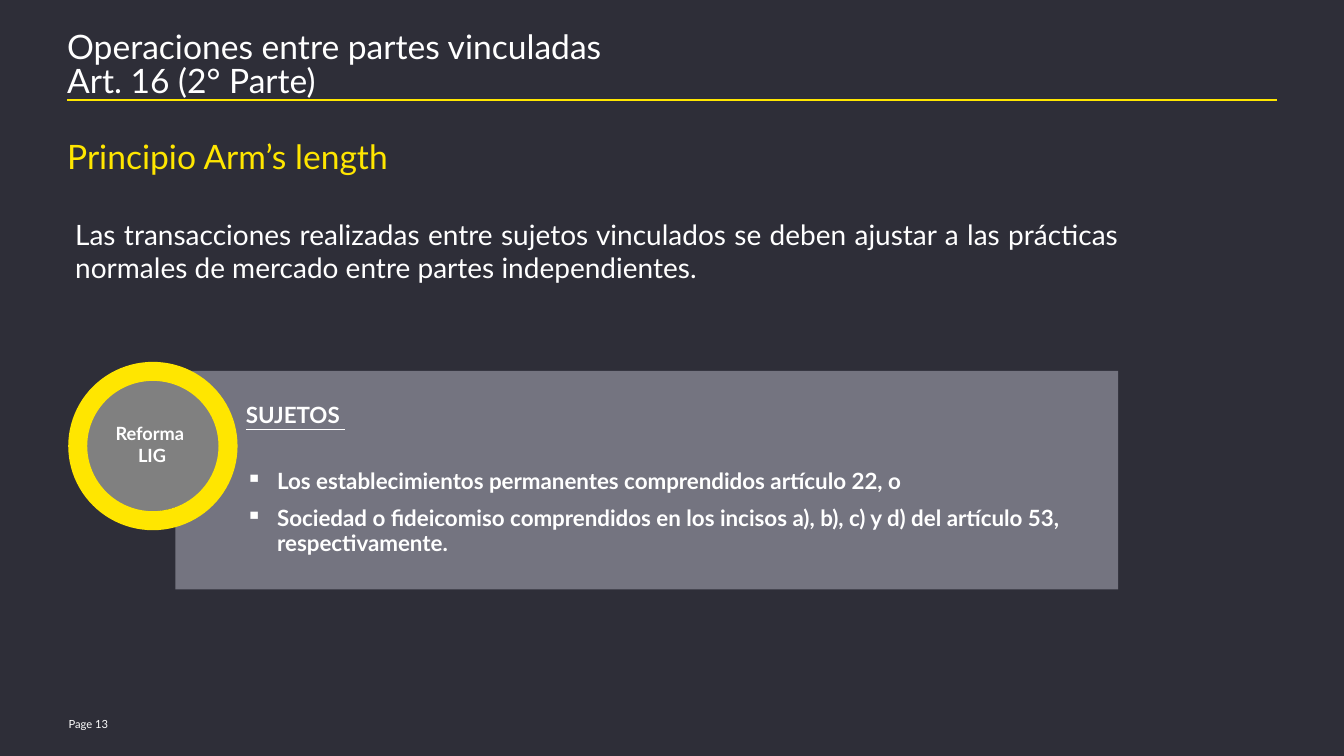
from lxml.etree import SubElement
from pptx import Presentation
from pptx.dml.color import RGBColor
from pptx.enum.shapes import MSO_CONNECTOR as Connector, MSO_SHAPE as Shape
from pptx.enum.text import MSO_ANCHOR as Anchor, PP_ALIGN as Align
from pptx.oxml.ns import qn
from pptx.util import Inches, Pt

BACKGROUND = RGBColor(0x2E, 0x2E, 0x38)
YELLOW = RGBColor(0xFF, 0xE6, 0x00)
WHITE = RGBColor(0xFF, 0xFF, 0xFF)
PANEL = RGBColor(0x74, 0x74, 0x80)
BADGE = RGBColor(0x80, 0x80, 0x80)


class SlideBuilder:
    font_name = "Lato"
    columns, rows = 80, 45

    def __init__(self, presentation):
        self.column = presentation.slide_width / self.columns
        self.row = presentation.slide_height / self.rows
        self.slide = presentation.slides.add_slide(presentation.slide_layouts[6])
        fill = self.slide.background.fill
        fill.solid()
        fill.fore_color.rgb = BACKGROUND

    def place(self, left, top, width, height):
        return (round(left * self.column), round(top * self.row),
                round(width * self.column), round(height * self.row))

    def text(self, *area, anchor=Anchor.TOP):
        box = self.slide.shapes.add_textbox(*self.place(*area))
        return self.frame(box, anchor, (0, 0, 0, 0))

    def shape(self, kind, *area, color):
        shape = self.slide.shapes.add_shape(kind, *self.place(*area))
        shape.shadow.inherit = False
        shape.fill.solid()
        shape.fill.fore_color.rgb = color
        shape.line.fill.background()
        return shape

    def rule(self, left, top, width, color, weight):
        x, y, length, _ = self.place(left, top, width, 0)
        line = self.slide.shapes.add_connector(Connector.STRAIGHT, x, y, x + length, y)
        line.line.color.rgb = color
        line.line.width = Pt(weight)
        SubElement(line._element.spPr, qn("a:effectLst"))

    def frame(self, shape, anchor, insets):
        frame = shape.text_frame
        frame.word_wrap = True
        frame.vertical_anchor = anchor
        (frame.margin_left, frame.margin_top,
         frame.margin_right, frame.margin_bottom) = map(Inches, insets)
        return frame

    def paragraph(self, frame, text, size, color=WHITE, bold=False, underline=False,
                  align=Align.LEFT, spacing=1.0, after=0, margin=0, bullet=None):
        first = frame.paragraphs[0]
        paragraph = frame.add_paragraph() if first.runs else first
        paragraph.text = text
        paragraph.alignment = align
        paragraph.line_spacing = spacing
        paragraph.space_after = Pt(after)
        properties = paragraph._p.get_or_add_pPr()
        properties.set("marL", str(Inches(margin)))
        if bullet:
            properties.set("indent", str(-Inches(margin)))
            SubElement(properties, qn("a:buChar"), char=bullet)
        for run in paragraph.runs:
            run.font.name = self.font_name
            run.font.size = Pt(size)
            run.font.color.rgb = color
            run.font.bold = bold
            run.font.underline = underline


def main():
    presentation = Presentation()
    presentation.slide_width = Inches(13.34)
    presentation.slide_height = Inches(7.5)
    builder = SlideBuilder(presentation)

    builder.rule(4, 5.94, 72, YELLOW, 1.5)
    title = builder.text(4, 1.92, 72, 3.9)
    builder.paragraph(title, "Operaciones entre partes vinculadas\vArt. 16 (2° Parte)",
                      24, spacing=0.85)
    page = builder.text(4.08, 42.48, 4.38, 1.2, anchor=Anchor.MIDDLE)
    builder.paragraph(page, "Page 13", 8)

    principle = builder.text(4, 8.1, 62.6, 10)
    builder.paragraph(principle, "Principio Arm’s length", 24, YELLOW, after=29)
    builder.paragraph(
        principle,
        "Las transacciones realizadas entre sujetos vinculados se deben ajustar a las "
        "prácticas normales de mercado entre partes independientes.",
        20, align=Align.JUSTIFY, margin=0.08)

    panel = builder.shape(Shape.RECTANGLE, 10.44, 22.08, 56.12, 13, color=PANEL)
    subjects = builder.frame(panel, Anchor.MIDDLE, (0.7, 0.08, 0.12, 0.08))
    builder.paragraph(subjects, "SUJETOS ", 16, bold=True, underline=True,
                      spacing=0.95, after=28.5)
    for item in (
        "Los establecimientos permanentes comprendidos artículo 22, o",
        "Sociedad o fideicomiso comprendidos en los incisos a), b), c) y d) "
        "del artículo 53, respectivamente.",
    ):
        builder.paragraph(subjects, item, 16, bold=True, spacing=0.95, after=8,
                          margin=0.31, bullet="▪")

    badge = builder.shape(Shape.OVAL, 5, 22.4, 8.1, 8.04, color=BADGE)
    reform = builder.frame(badge, Anchor.MIDDLE, (0.1, 0.05, 0.1, 0.05))
    for word in ("Reforma ", "LIG"):
        builder.paragraph(reform, word, 13, bold=True, align=Align.CENTER)
    ring = builder.shape(Shape.DONUT, 4.06, 21.54, 10.08, 10.02, color=YELLOW)
    ring.adjustments[0] = 0.113

    presentation.save("out.pptx")


if __name__ == "__main__":
    main()
